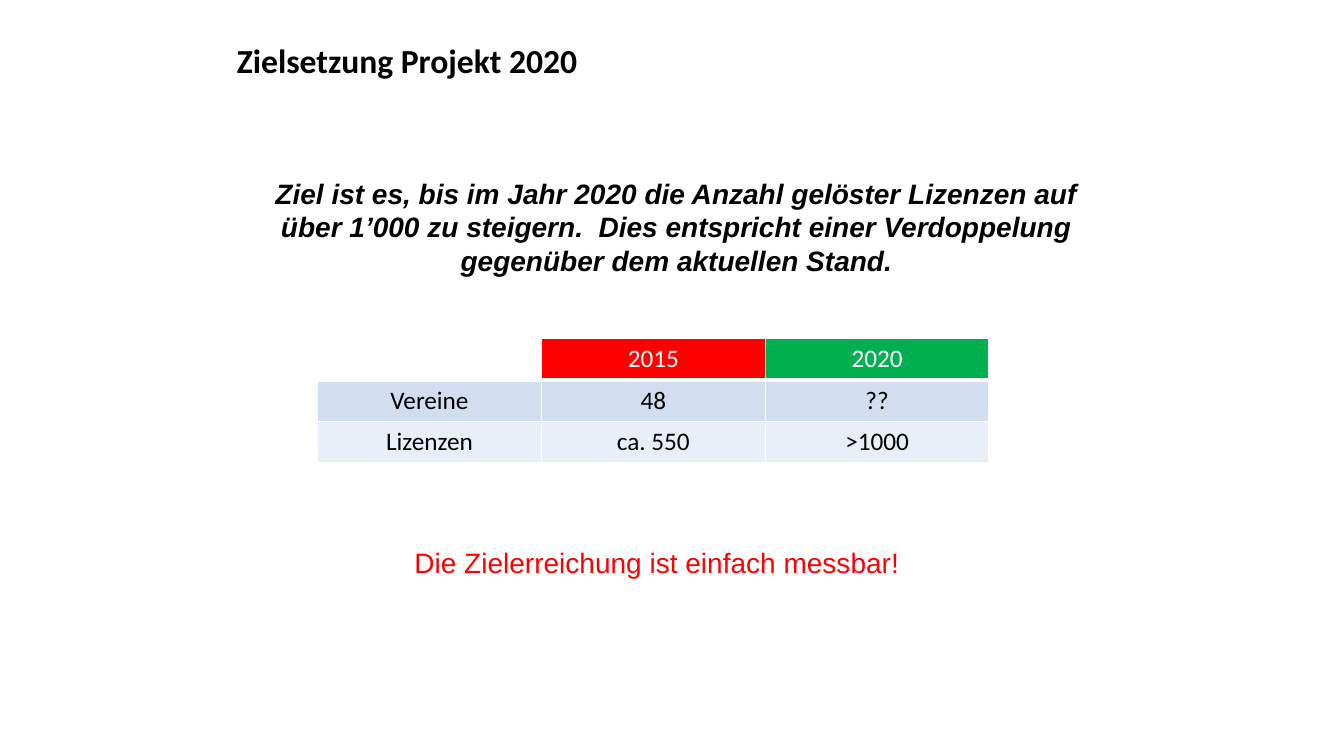
from lxml.etree import SubElement
from pptx import Presentation
from pptx.dml.color import RGBColor
from pptx.enum.text import MSO_ANCHOR, PP_ALIGN
from pptx.oxml.ns import qn
from pptx.util import Inches, Pt

BLACK = RGBColor(0x00, 0x00, 0x00)
WHITE = RGBColor(0xFF, 0xFF, 0xFF)
RED = RGBColor(0xFF, 0x00, 0x00)
GREEN = RGBColor(0x00, 0xB0, 0x50)
BLUE_BAND = RGBColor(0xD2, 0xDE, 0xEF)
PALE_BAND = RGBColor(0xEA, 0xEF, 0xF7)

TITLE_FORMAT = {"name": "Calibri", "size": Pt(24), "bold": True}
GOAL_FORMAT = {"name": "Arial", "size": Pt(20), "bold": True, "italic": True}
REMARK_FORMAT = {"name": "Arial", "size": Pt(20)}
CELL_FORMAT = {"name": "Calibri", "size": Pt(18), "bold": False}

GOAL = (
    "Ziel ist es, bis im Jahr 2020 die Anzahl gelöster Lizenzen auf über 1’000 "
    "zu steigern.  Dies entspricht einer Verdoppelung gegenüber dem aktuellen Stand."
)
REMARK = "Die Zielerreichung ist einfach messbar!"
TABLE_ROWS = [
    (("", "2015", "2020"), (None, RED, GREEN), WHITE),
    (("Vereine", "48", "??"), (BLUE_BAND,) * 3, BLACK),
    (("Lizenzen", "ca. 550", ">1000"), (PALE_BAND,) * 3, BLACK),
]


def write_text(text_frame, text, font_format, color, alignment):
    """Put one formatted paragraph into a text frame and return it."""
    paragraph = text_frame.paragraphs[0]
    paragraph.alignment = alignment
    run = paragraph.add_run()
    run.text = text
    for attribute, value in font_format.items():
        setattr(run.font, attribute, value)
    run.font.color.rgb = color
    return paragraph


def place_title(slide, text, left, top, width, height):
    """Move the title placeholder and fill it."""
    title = slide.shapes.title
    title.left, title.top = Inches(left), Inches(top)
    title.width, title.height = Inches(width), Inches(height)
    title.text_frame.vertical_anchor = MSO_ANCHOR.MIDDLE
    paragraph = write_text(title.text_frame, text, TITLE_FORMAT, BLACK, PP_ALIGN.LEFT)
    paragraph.line_spacing = 0.9


def add_centred_text(slide, text, font_format, color, left, top, width, height):
    """Add a wrapping text box with one centred paragraph."""
    box = slide.shapes.add_textbox(
        Inches(left), Inches(top), Inches(width), Inches(height)
    )
    box.text_frame.word_wrap = True
    write_text(box.text_frame, text, font_format, color, PP_ALIGN.CENTER)


def set_borders(cell, widths):
    """Draw white cell borders with the given widths in points."""
    properties = cell._tc.get_or_add_tcPr()
    for position, (side, width) in enumerate(widths.items()):
        line = properties.makeelement(qn(f"a:{side}"), {"w": str(Pt(width))})
        fill = SubElement(line, qn("a:solidFill"))
        SubElement(fill, qn("a:srgbClr"), val=str(WHITE))
        properties.insert(position, line)


def add_goal_table(slide, left, top, column_width, row_height):
    """Add the table that compares the two years."""
    row_count, column_count = len(TABLE_ROWS), len(TABLE_ROWS[0][0])
    table = slide.shapes.add_table(
        row_count, column_count, Inches(left), Inches(top),
        Inches(column_width * column_count), Inches(row_height * row_count),
    ).table
    for row_index, (texts, fills, color) in enumerate(TABLE_ROWS):
        for column_index, (text, fill) in enumerate(zip(texts, fills)):
            cell = table.cell(row_index, column_index)
            if fill is None:
                cell.fill.background()
            else:
                cell.fill.solid()
                cell.fill.fore_color.rgb = fill
            if text:
                write_text(cell.text_frame, text, CELL_FORMAT, color, PP_ALIGN.CENTER)
            top_width = 3 if row_index == 1 else 1
            bottom_width = 3 if row_index == 0 else 1
            set_borders(
                cell, {"lnL": 1, "lnR": 1, "lnT": top_width, "lnB": bottom_width}
            )


def main():
    """Build the slide and save the presentation."""
    presentation = Presentation()
    presentation.slide_width = Inches(13.33)
    presentation.slide_height = Inches(7.5)
    slide = presentation.slides.add_slide(presentation.slide_layouts[5])
    add_centred_text(slide, GOAL, GOAL_FORMAT, BLACK, 2.42, 1.7, 8.58, 1.45)
    place_title(slide, "Zielsetzung Projekt 2020", 2.25, 0, 8.98, 1.25)
    add_goal_table(slide, 3.15, 3.36, 2.22, 0.41)
    add_centred_text(slide, REMARK, REMARK_FORMAT, RED, 2.34, 5.36, 8.35, 0.44)
    presentation.save("out.pptx")


if __name__ == "__main__":
    main()
